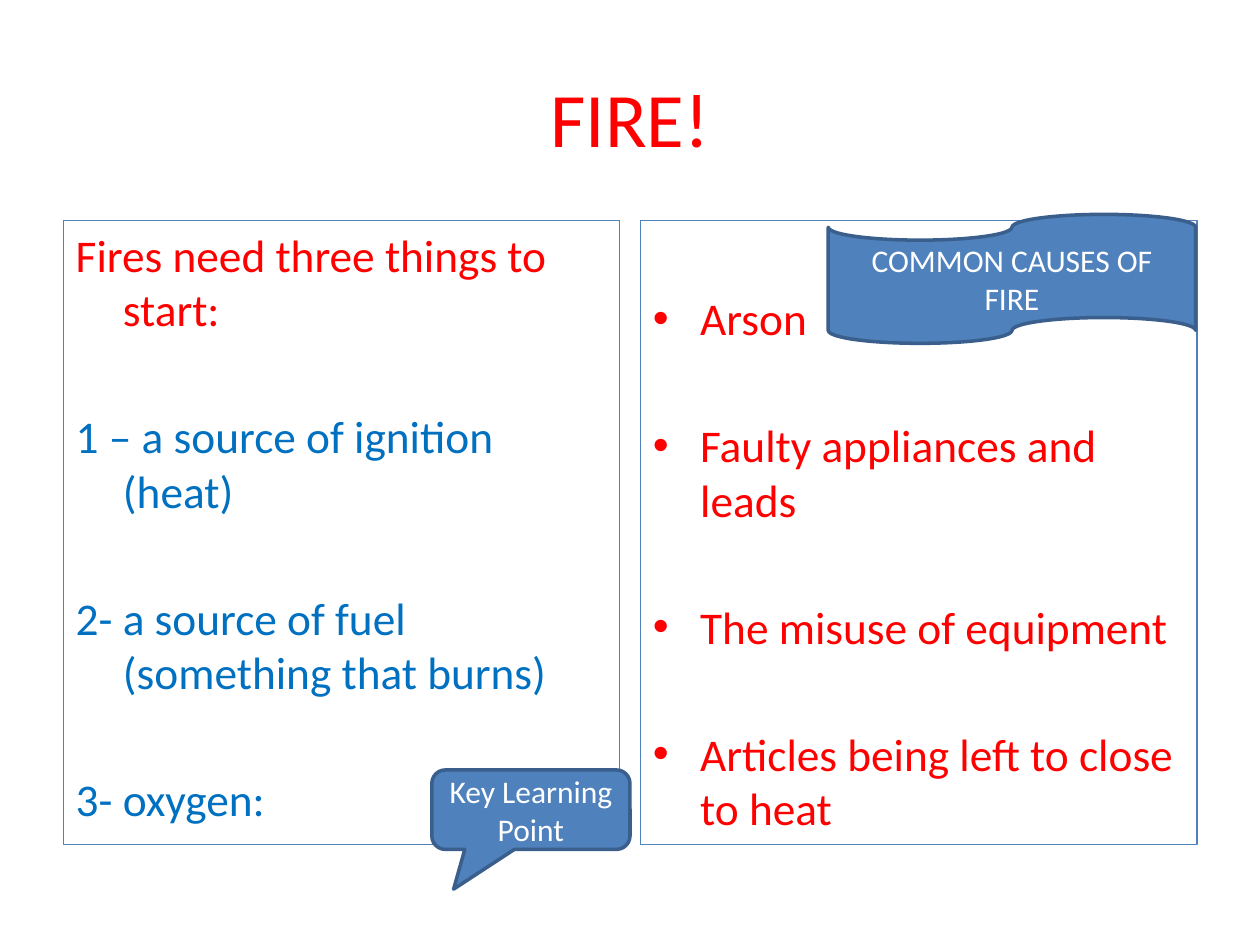
import pptx
import pptx.dml.color
import pptx.enum.shapes
import pptx.enum.text
import pptx.util
from lxml import etree

Pt = pptx.util.Pt
RGBColor = pptx.dml.color.RGBColor
Shape = pptx.enum.shapes.MSO_SHAPE
Anchor = pptx.enum.text.MSO_ANCHOR
Align = pptx.enum.text.PP_ALIGN

RED = RGBColor(0xFF, 0x00, 0x00)
BLUE = RGBColor(0x00, 0x70, 0xC0)
ACCENT = RGBColor(0x4F, 0x81, 0xBD)
ACCENT_DARK = RGBColor(0x3A, 0x5F, 0x8C)
WHITE = RGBColor(0xFF, 0xFF, 0xFF)

PANEL_TOP, PANEL_WIDTH, PANEL_HEIGHT = 126, 318, 356.4
MARGIN = 36.2
INSET = 3.6
LINE_HEIGHT = 31.13
SPACE_BEFORE = 5.18
ITEM_GAP = LINE_HEIGHT + 2 * SPACE_BEFORE
INDENT = 27


class SlideBuilder:
    font_name = "Calibri"
    title_size = 44
    body_size = 25.9
    label_size = 18

    def __init__(self, slide):
        self.slide = slide

    def style(self, paragraph, size, color, alignment):
        paragraph.alignment = alignment
        paragraph.font.name = self.font_name
        paragraph.font.size = Pt(size)
        paragraph.font.color.rgb = color

    def title(self, text, left, top, width, height):
        box = self.slide.shapes.add_textbox(Pt(left), Pt(top), Pt(width), Pt(height))
        frame = box.text_frame
        frame.word_wrap = True
        frame.vertical_anchor = Anchor.MIDDLE
        frame.text = text
        self.style(frame.paragraphs[0], self.title_size, RED, Align.CENTER)

    def shape(self, kind, left, top, width, height, line_color, line_width):
        shape = self.slide.shapes.add_shape(kind, Pt(left), Pt(top), Pt(width), Pt(height))
        shape.shadow.inherit = False
        shape.line.color.rgb = line_color
        shape.line.width = Pt(line_width)
        shape.text_frame.word_wrap = True
        return shape

    def panel(self, left, items, top_inset=INSET, bulleted=False):
        """Outlined text panel; items are (text, color)."""
        shape = self.shape(Shape.RECTANGLE, left, PANEL_TOP, PANEL_WIDTH, PANEL_HEIGHT, ACCENT, 0.75)
        shape.fill.background()
        frame = shape.text_frame
        frame.vertical_anchor = Anchor.TOP
        frame.margin_top = Pt(top_inset)
        for index, (text, color) in enumerate(items):
            paragraph = frame.add_paragraph() if index else frame.paragraphs[0]
            paragraph.text = text
            paragraph.space_before = Pt(ITEM_GAP if index else 0)
            paragraph.line_spacing = Pt(LINE_HEIGHT)
            self.style(paragraph, self.body_size, color, Align.LEFT)
            self.hang(paragraph, bulleted)

    def hang(self, paragraph, bulleted):
        """Hanging indent, with an optional bullet."""
        properties = paragraph._p.get_or_add_pPr()
        properties.set("marL", str(Pt(INDENT)))
        properties.set("indent", str(-Pt(INDENT)))
        if bulleted:
            namespace = properties.nsmap["a"]
            font = etree.Element(f"{{{namespace}}}buFont", typeface="Arial")
            bullet = etree.Element(f"{{{namespace}}}buChar", char="•")
            position = [etree.QName(child).localname for child in properties].index("defRPr")
            properties.insert(position, font)
            properties.insert(position + 1, bullet)

    def label(self, kind, text, left, top, width, height, adjustments=()):
        shape = self.shape(kind, left, top, width, height, ACCENT_DARK, 2)
        shape.fill.solid()
        shape.fill.fore_color.rgb = ACCENT
        for index, value in enumerate(adjustments):
            shape.adjustments[index] = value
        shape.text_frame.vertical_anchor = Anchor.MIDDLE
        shape.text_frame.text = text
        self.style(shape.text_frame.paragraphs[0], self.label_size, WHITE, Align.CENTER)


def main():
    presentation = pptx.Presentation()
    presentation.slide_width, presentation.slide_height = Pt(720), Pt(540)
    builder = SlideBuilder(presentation.slides.add_slide(presentation.slide_layouts[6]))

    builder.title("FIRE!", 36, 21.6, 648, 90)
    needs = ["1 – a source of ignition (heat)",
             "2- a source of fuel (something that burns)",
             "3- oxygen:"]
    builder.panel(MARGIN, [("Fires need three things to start:", RED)]
                  + [(text, BLUE) for text in needs])
    causes = ["Arson", "Faulty appliances and leads", "The misuse of equipment",
              "Articles being left to close to heat"]
    builder.panel(720 - MARGIN - PANEL_WIDTH + 0.2, [(text, RED) for text in causes],
                  top_inset=INSET + LINE_HEIGHT + SPACE_BEFORE, bulleted=True)
    builder.label(Shape.FLOWCHART_PUNCHED_TAPE, "COMMON CAUSES OF FIRE",
                  473.3, 122.5, 210, 73.7)
    builder.label(Shape.ROUNDED_RECTANGULAR_CALLOUT, "Key Learning Point",
                  246.75, 440, 113.25, 45.4, (-0.39, 1, 0.17))
    presentation.save("out.pptx")


if __name__ == "__main__":
    main()
